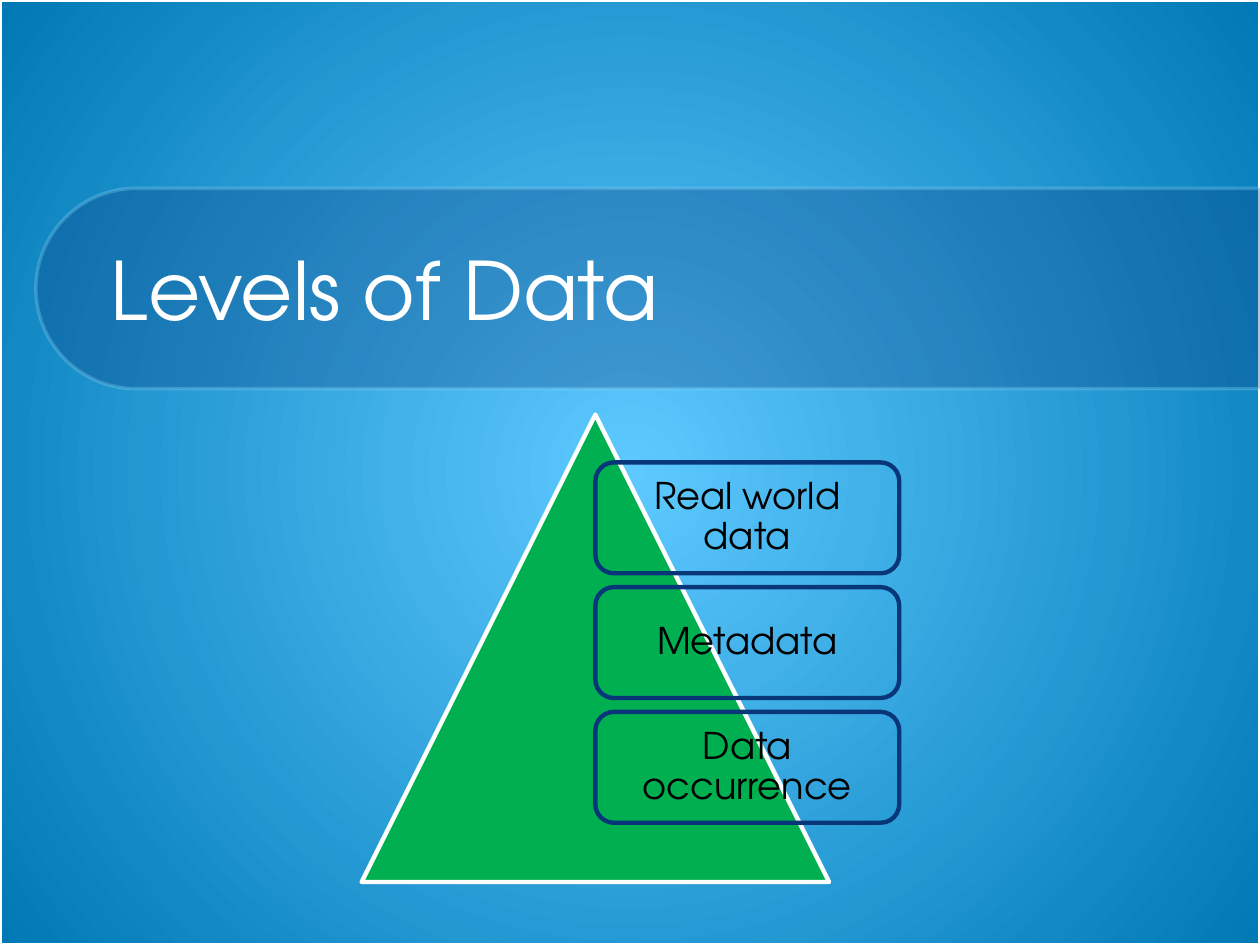
from lxml import etree
from pptx import Presentation
from pptx import util as u
from pptx.dml.color import RGBColor
from pptx.enum import shapes, text
from pptx.oxml.ns import qn

COLORS = {"glow": "5DC9FF", "edge": "0079B5", "navy": "073779", "rim": "8FD9FB",
          "green": "00B050", "white": "FFFFFF", "black": "000000"}
FONT = "TeX Gyre Adventor"
W, H = 10, 7.5
SHAPE = shapes.MSO_SHAPE


def rgb(name):
    return RGBColor.from_string(COLORS[name])


def add_shape(kind, left, top, width, height, line, weight, fill=None):
    sp = s.shapes.add_shape(kind, *map(u.Inches, (left, top, width, height)))
    sp.shadow.inherit = False
    sp.line.color.rgb = rgb(line)
    sp.line.width = u.Pt(weight)
    if fill:
        sp.fill.solid()
        sp.fill.fore_color.rgb = rgb(fill)
    else:
        sp.fill.background()
    return sp


prs = Presentation()
prs.slide_width, prs.slide_height = u.Inches(W), u.Inches(H)
s = prs.slides.add_slide(prs.slide_layouts[5])

# Radial background, light in the centre
bg = s.background.fill
bg.gradient()
for stop, name in zip(bg.gradient_stops, ("glow", "edge")):
    stop.color.rgb = rgb(name)
grad = s.background._cSld.find(".//" + qn("a:gradFill"))
grad.remove(grad.find(qn("a:lin")))
path = etree.SubElement(grad, qn("a:path"), path="circle")
etree.SubElement(path, qn("a:fillToRect"), l="50000", t="50000", r="50000", b="50000")

add_shape(SHAPE.RECTANGLE, 0, 0, W, H, "white", 2)

# Title band: a rounded-top shape turned on its side
band = add_shape(SHAPE.ROUND_2_SAME_RECTANGLE, 4.35, -2.57, 1.59, 9.72, "rim", 2, "navy")
band.adjustments[0], band.adjustments[1] = 0.5, 0
band.rotation = 270
for color in band._element.spPr.iter(qn("a:srgbClr")):
    etree.SubElement(color, qn("a:alpha"), val="30000")

title = s.shapes.title
s.shapes._spTree.append(title._element)
title.left, title.top, title.width, title.height = map(u.Inches, (0.78, 1.5, 8.44, 1.58))
tf = title.text_frame
tf.text = "Levels of Data"
tf.auto_size = text.MSO_AUTO_SIZE.NONE
tf.vertical_anchor = text.MSO_ANCHOR.MIDDLE
p = tf.paragraphs[0]
p.alignment = text.PP_ALIGN.LEFT
p.font.name, p.font.size, p.font.color.rgb = FONT, u.Pt(46), rgb("white")

# Pyramid with its stacked levels, starting at the pyramid's centre line
side, left, top = 3.71, 2.87, 3.29
add_shape(SHAPE.ISOSCELES_TRIANGLE, left, top, side, side, "white", 2.5, "green")

box_w, box_h = 0.65 * side, 0.88
pitch = box_h * 9 / 8
for row, label in enumerate(("Real world data", "Metadata", "Data occurrence")):
    sp = add_shape(SHAPE.ROUNDED_RECTANGLE, left + side / 2, top + 0.38 + row * pitch,
                   box_w, box_h, "navy", 2.5)
    tf = sp.text_frame
    tf.text = label
    tf.word_wrap = True
    tf.vertical_anchor = text.MSO_ANCHOR.MIDDLE
    tf.margin_left = tf.margin_right = tf.margin_top = tf.margin_bottom = u.Inches(0.09)
    p = tf.paragraphs[0]
    p.alignment = text.PP_ALIGN.CENTER
    p.line_spacing = 0.9
    p.font.name, p.font.size, p.font.color.rgb = FONT, u.Pt(21), rgb("black")

prs.save("out.pptx")
